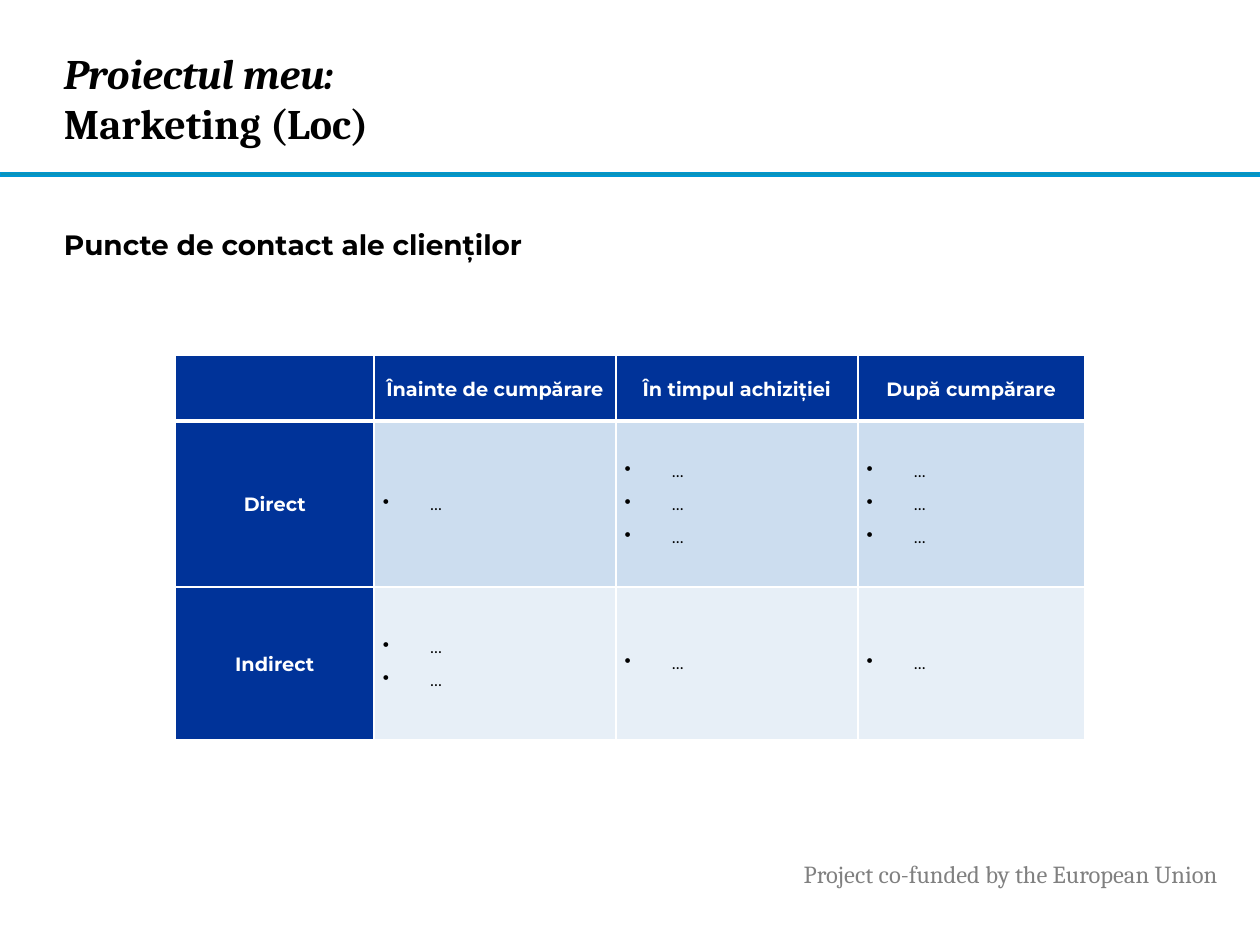
from dataclasses import dataclass

from lxml import etree
from pptx import Presentation
from pptx import util as u
from pptx.dml.color import RGBColor
from pptx.enum import shapes, text
from pptx.oxml import ns

Pt = u.Pt


@dataclass(frozen=True)
class Theme:
    heading_font: str = "Cambria"
    body_font: str = "Montserrat"
    black: str = "000000"
    white: str = "FFFFFF"
    gray: str = "808080"
    navy: str = "003399"
    rule_fill: str = "0C94B7"
    rule_line: str = "0096D3"
    bands: tuple = ("CCDDEF", "E7EFF7")
    title_size: float = 24
    subtitle_size: float = 16
    footer_size: float = 14
    header_size: float = 11
    cell_size: float = 10.5


class SlideBuilder:
    def __init__(self, slide, theme):
        self.slide = slide
        self.theme = theme

    def add_run(self, paragraph, words, size, color, font, bold=False, italic=False):
        run = paragraph.add_run()
        run.text = words
        run.font.name = font
        run.font.size = Pt(size)
        run.font.bold = bold
        run.font.italic = italic
        run.font.color.rgb = RGBColor.from_string(color)

    def set_frame(self, frame, margins, anchor):
        frame.word_wrap = True
        frame.auto_size = text.MSO_AUTO_SIZE.NONE
        frame.vertical_anchor = anchor
        (frame.margin_left, frame.margin_top,
         frame.margin_right, frame.margin_bottom) = map(Pt, margins)

    def title(self, box, lines):
        """Fill the title placeholder with (words, italic) lines."""
        shape = self.slide.shapes.title
        shape.left, shape.top, shape.width, shape.height = map(Pt, box)
        self.set_frame(shape.text_frame, (0, 0, 0, 0), text.MSO_ANCHOR.MIDDLE)
        paragraph = shape.text_frame.paragraphs[0]
        paragraph.alignment = text.PP_ALIGN.LEFT
        for index, (words, italic) in enumerate(lines):
            if index:
                paragraph.add_line_break()
            self.add_run(paragraph, words, self.theme.title_size, self.theme.black,
                         self.theme.heading_font, bold=True, italic=italic)

    def text_box(self, box, words, size, color, font, margins, bold=False):
        shape = self.slide.shapes.add_textbox(*map(Pt, box))
        self.set_frame(shape.text_frame, margins, text.MSO_ANCHOR.TOP)
        self.add_run(shape.text_frame.paragraphs[0], words, size, color, font, bold)

    def rule(self, box):
        shape = self.slide.shapes.add_shape(shapes.MSO_SHAPE.RECTANGLE, *map(Pt, box))
        shape.shadow.inherit = False
        shape.fill.solid()
        shape.fill.fore_color.rgb = RGBColor.from_string(self.theme.rule_fill)
        shape.line.color.rgb = RGBColor.from_string(self.theme.rule_line)
        shape.line.width = Pt(1)

    def style_cell(self, cell, fill, top=1, bottom=1):
        """Set white borders (widths in points), fill and margins."""
        properties = cell._tc.get_or_add_tcPr()
        for side, width in zip("LRTB", (1, 1, top, bottom)):
            line = etree.SubElement(properties, ns.qn(f"a:ln{side}"), w=str(Pt(width)))
            solid = etree.SubElement(line, ns.qn("a:solidFill"))
            etree.SubElement(solid, ns.qn("a:srgbClr"), val=self.theme.white)
        cell.fill.solid()
        cell.fill.fore_color.rgb = RGBColor.from_string(fill)
        cell.margin_left = cell.margin_right = Pt(5)
        cell.margin_top = cell.margin_bottom = 0
        cell.vertical_anchor = text.MSO_ANCHOR.MIDDLE

    def header_cell(self, cell, words):
        if not words:
            return
        paragraph = cell.text_frame.paragraphs[0]
        paragraph.alignment = text.PP_ALIGN.CENTER
        paragraph.line_spacing = 1.07
        paragraph.space_after = Pt(4)
        self.add_run(paragraph, words, self.theme.header_size, self.theme.white,
                     self.theme.body_font, bold=True)

    def bullet_cell(self, cell, items):
        frame = cell.text_frame
        for index, words in enumerate(items):
            paragraph = frame.add_paragraph() if index else frame.paragraphs[0]
            properties = paragraph._p.get_or_add_pPr()
            properties.set("marL", str(Pt(27)))
            properties.set("indent", str(Pt(-27)))
            etree.SubElement(properties, ns.qn("a:buChar"), char="•")
            paragraph.space_before = Pt(3 if index else 0)
            paragraph.space_after = Pt(3)
            self.add_run(paragraph, words, self.theme.cell_size, self.theme.black,
                         self.theme.body_font)

    def table(self, left, top, widths, heights, headers, rows):
        """Draw headers, then rows of (label, bullet lists)."""
        frame = self.slide.shapes.add_table(
            len(heights), len(widths), Pt(left), Pt(top), Pt(sum(widths)), Pt(sum(heights)))
        table = frame.table
        for column, width in zip(table.columns, widths):
            column.width = Pt(width)
        for row, height in zip(table.rows, heights):
            row.height = Pt(height)

        # Header row, with a heavier border below
        for index, words in enumerate(headers):
            cell = table.cell(0, index)
            self.style_cell(cell, self.theme.navy, bottom=3)
            self.header_cell(cell, words)

        # Labelled rows in alternating tints
        for number, ((label, lists), band) in enumerate(zip(rows, self.theme.bands), 1):
            border = 3 if number == 1 else 1
            self.style_cell(table.cell(number, 0), self.theme.navy, top=border)
            self.header_cell(table.cell(number, 0), label)
            for index, items in enumerate(lists, 1):
                cell = table.cell(number, index)
                self.style_cell(cell, band, top=border)
                self.bullet_cell(cell, items)


def main():
    presentation = Presentation()
    presentation.slide_width, presentation.slide_height = Pt(720), Pt(540)
    theme = Theme()
    slide = presentation.slides.add_slide(presentation.slide_layouts[5])
    builder = SlideBuilder(slide, theme)

    # Heading and rule
    builder.title((36.5, 13, 523.5, 85.5),
                  [("Proiectul meu:", True), ("Marketing (Loc)", False)])
    builder.rule((0, 98.6, 720, 2.2))

    # Footer and subtitle
    builder.text_box((452.2, 487.4, 263.5, 24.5), "Project co-funded by the European Union",
                     theme.footer_size, theme.gray, theme.heading_font, (7.2, 3.6, 7.2, 3.6))
    builder.text_box((36.5, 126.7, 611.3, 36), "Puncte de contact ale clienților",
                     theme.subtitle_size, theme.black, theme.body_font, (0, 3.6, 0, 3.6),
                     bold=True)

    # Customer contact points
    builder.table(
        100.3, 203.2, (113.5, 138.2, 138.2, 129.6), (37.4, 95, 87),
        ("", "Înainte de cumpărare", "În timpul achiziției", "După cumpărare"),
        [("Direct", (["…"], ["…"] * 3, ["…"] * 3)),
         ("Indirect", (["…"] * 2, ["…"], ["…"]))])

    presentation.save("out.pptx")


if __name__ == "__main__":
    main()
